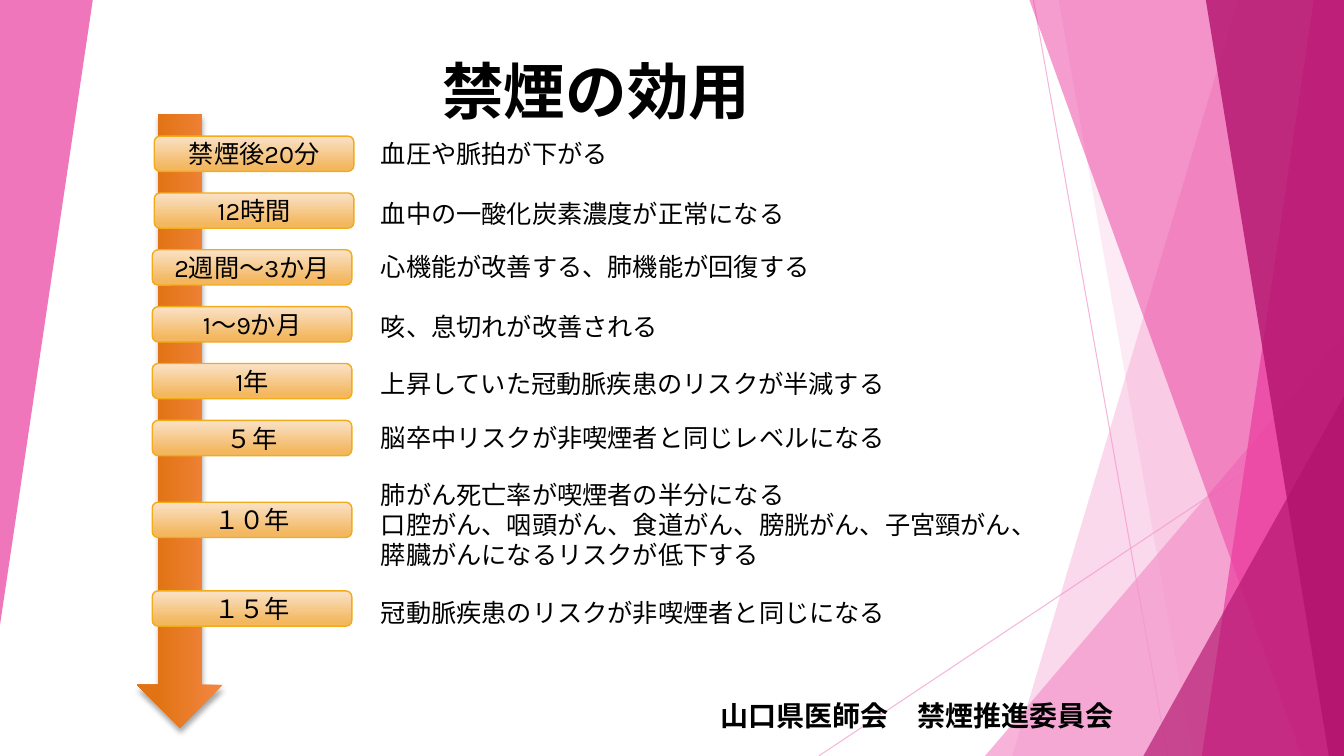
from lxml import etree
from pptx import Presentation, util as u
from pptx.dml.color import RGBColor
from pptx.enum import lang, shapes, text
from pptx.oxml import ns, parse_xml

W, H = 13.33, 7.5
FONT = "Karla"
PALE, PINK, PLUM = "F496CB", "EB3D9F", "B2136D"
PITCH = 0.564

# pitches below the first badge, badge indent, text offset from badge, badge label, effects
MILESTONES = [
    (0, 0.17, -0.03, "禁煙後20分", ["血圧や脈拍が下がる"]),
    (1, 0.17, 0, "12時間", ["血中の一酸化炭素濃度が正常になる"]),
    (2, 0.15, -0.03, "2週間～3か月", ["心機能が改善する、肺機能が回復する"]),
    (3, 0.15, 0, "1～9か月", ["咳、息切れが改善される"]),
    (4, 0.15, 0, "1年", ["上昇していた冠動脈疾患のリスクが半減する"]),
    (5, 0.15, -0.03, "５年", ["脳卒中リスクが非喫煙者と同じレベルになる"]),
    (6.44, 0.15, -0.28, "１０年", [
        "肺がん死亡率が喫煙者の半分になる",
        "口腔がん、咽頭がん、食道がん、膀胱がん、子宮頸がん、",
        "膵臓がんになるリスクが低下する"]),
    (8, 0.15, 0.01, "１５年", ["冠動脈疾患のリスクが非喫煙者と同じになる"]),
]


def inches(*lengths):
    return [u.Inches(length) for length in lengths]


def set_color(color, hex_string, opacity=100):
    color.rgb = RGBColor.from_string(hex_string)
    if opacity < 100:
        srgb = color._xFill.find(ns.qn("a:srgbClr"))
        etree.SubElement(srgb, ns.qn("a:alpha"), val=str(opacity * 1000))


def paint(shape, hex_string, opacity):
    shape.shadow.inherit = False
    shape.fill.solid()
    set_color(shape.fill.fore_color, hex_string, opacity)
    shape.line.fill.background()


def paint_gradient(shape, start, end, end_position):
    shape.shadow.inherit = False
    shape.fill.gradient()
    shape.fill.gradient_angle = 270
    for stop, color, position in zip(shape.fill.gradient_stops, (start, end), (0, end_position)):
        set_color(stop.color, color)
        stop.position = position


def write(frame, lines, size, bold=False, align=None):
    frame.word_wrap = True
    frame.text = "\n".join(lines)
    for paragraph in frame.paragraphs:
        paragraph.alignment = align
        for run in paragraph.runs:
            run.font.name, run.font.size, run.font.bold = FONT, u.Pt(size), bold
            run.font.language_id = lang.MSO_LANGUAGE_ID.JAPANESE
            set_color(run.font.color, "000000")


def add_text(slide, box, lines, size, bold=False, align=text.PP_ALIGN.LEFT):
    frame = slide.shapes.add_textbox(*inches(*box)).text_frame
    write(frame, lines, size, bold, align)
    return frame


def add_ray(slide, start, end):
    ray = slide.shapes.add_connector(shapes.MSO_CONNECTOR.STRAIGHT, *inches(*start, *end))
    ray.line.width = u.Pt(0.75)
    ray.line.fill.solid()
    set_color(ray.line.fill.fore_color, PALE, 70)
    etree.SubElement(ray._element.spPr, ns.qn("a:effectLst"))


def add_facet(slide, top_x, bottom_x, color, opacity):
    """Full-height band from a slanted left edge to the slide's right edge."""
    corners = [inches(*point) for point in ((top_x, 0), (W, 0), (W, H), (bottom_x, H))]
    builder = slide.shapes.build_freeform(*corners[0])
    builder.add_line_segments(corners[1:], close=True)
    paint(builder.convert_to_shape(), color, opacity)


def add_wedge(slide, box, color, opacity, rotation=0):
    wedge = slide.shapes.add_shape(shapes.MSO_SHAPE.ISOSCELES_TRIANGLE, *inches(*box))
    wedge.adjustments[0] = 1
    wedge.rotation = rotation
    paint(wedge, color, opacity)


def add_backdrop(slide):
    add_ray(slide, (10.25, 0), (11.58, H))
    add_ray(slide, (W, 4.03), (8.12, H))
    add_facet(slide, 12.28, 10.04, PALE, 36)
    add_facet(slide, 10.5, 11.83, PALE, 20)
    add_wedge(slide, (9.77, 3.33, W - 9.77, H - 3.33), PALE, 72)
    add_facet(slide, 10.21, 12.91, PINK, 50)
    add_facet(slide, 13.03, 11.92, PINK, 70)
    add_facet(slide, 11.96, 13.18, PLUM, 80)
    add_wedge(slide, (11.34, 3.93, W - 11.34, H - 3.93), PLUM, 66)
    add_wedge(slide, (0, 0, 0.92, 6.2), PINK, 70, rotation=180)


def add_time_arrow(slide, left, top, width, height):
    """Right arrow turned to point down, filling the given upright box."""
    unturned = (left + (width - height) / 2, top + (height - width) / 2, height, width)
    arrow = slide.shapes.add_shape(shapes.MSO_SHAPE.RIGHT_ARROW, *inches(*unturned))
    arrow.rotation = 90
    paint_gradient(arrow, "F38742", "E17313", 0.78)
    arrow.line.fill.background()
    effects = arrow._element.spPr.find(ns.qn("a:effectLst"))
    effects.append(parse_xml(
        f'<a:outerShdw {ns.nsdecls("a")} blurRad="{u.Pt(4)}" dist="{u.Pt(3)}" dir="5400000" '
        'rotWithShape="0"><a:srgbClr val="000000"><a:alpha val="35000"/></a:srgbClr></a:outerShdw>'))


def add_badge(slide, box, label):
    badge = slide.shapes.add_shape(shapes.MSO_SHAPE.ROUNDED_RECTANGLE, *inches(*box))
    paint_gradient(badge, "FAE2C8", "F3B75F", 0.88)
    badge.line.width = u.Pt(1)
    set_color(badge.line.color, "F2AC19")
    badge.text_frame.vertical_anchor = text.MSO_ANCHOR.MIDDLE
    write(badge.text_frame, [label], 18, align=text.PP_ALIGN.CENTER)


def add_timeline(slide, left, top, width, height):
    add_time_arrow(slide, left, top, 0.85, height)
    effect_indent = 2.32
    for step, indent, offset, label, effects in MILESTONES:
        badge_top = top + 0.22 + step * PITCH
        add_badge(slide, (left + indent, badge_top, 1.98, 0.35), label)
        effect_box = (left + effect_indent, badge_top + offset,
                      width - effect_indent, 0.1 + 0.3 * len(effects))
        add_text(slide, effect_box, effects, 18)


def main():
    deck = Presentation()
    deck.slide_width, deck.slide_height = inches(W, H)
    slide = deck.slides.add_slide(deck.slide_layouts[6])
    add_backdrop(slide)
    add_text(slide, (7.05, 6.88, 4.21, 0.44), ["山口県医師会　禁煙推進委員会"], 20, bold=True)
    title = add_text(slide, (1.67, 0.26, 8.49, 1.05), ["禁煙の効用"], 44, True, text.PP_ALIGN.CENTER)
    title.vertical_anchor = text.MSO_ANCHOR.BOTTOM
    add_timeline(slide, 1.36, 1.13, 9.26, 6.09)
    deck.save("out.pptx")


if __name__ == "__main__":
    main()
